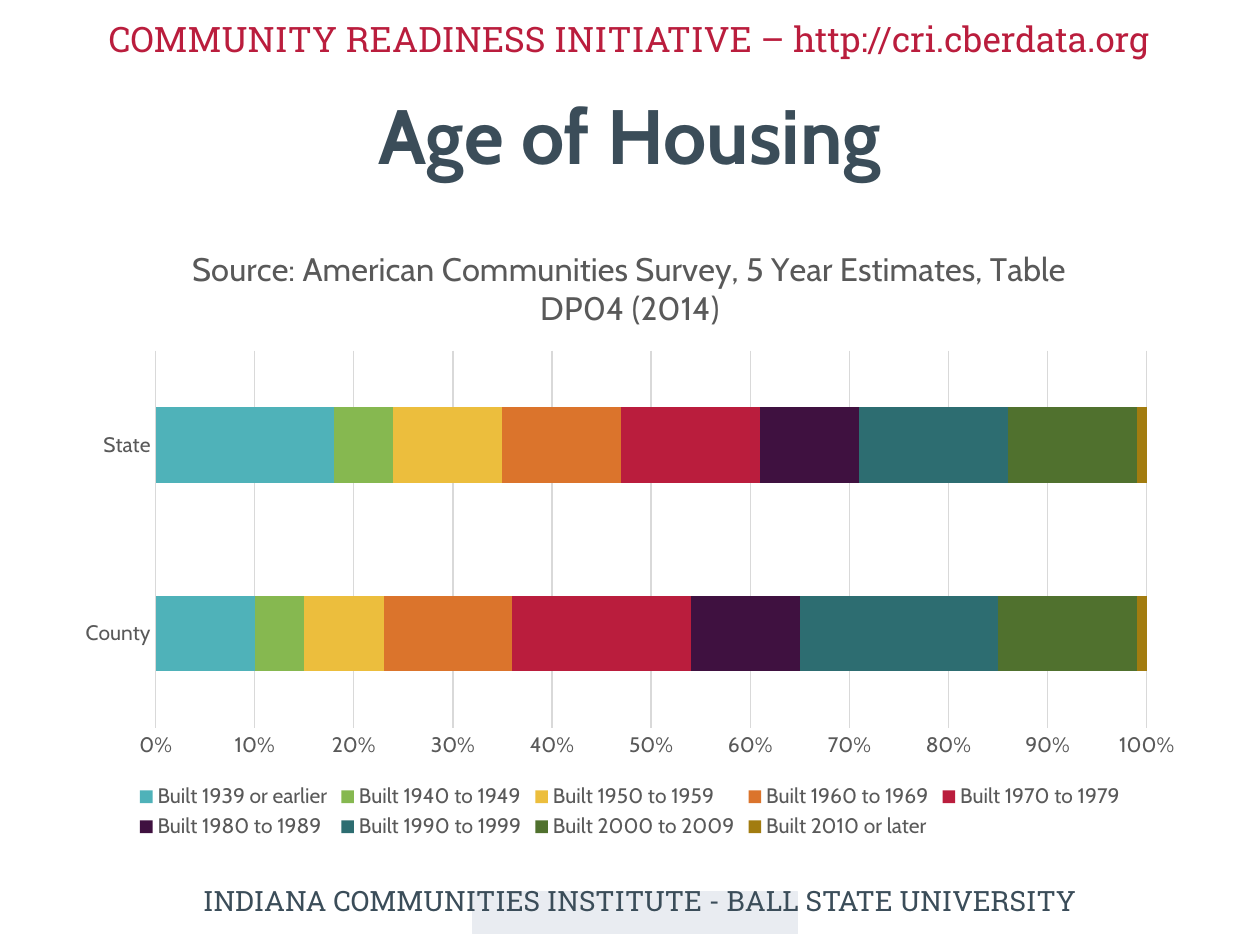
"""Build the Age of Housing slide with a stacked bar chart."""
from pptx import Presentation
from pptx.chart.data import CategoryChartData
from pptx.dml.color import RGBColor
from pptx.enum.chart import XL_CHART_TYPE, XL_LEGEND_POSITION, XL_TICK_MARK
from pptx.enum.shapes import MSO_SHAPE
from pptx.enum.text import MSO_ANCHOR, PP_ALIGN
from pptx.util import Cm, Pt

BAR = XL_CHART_TYPE.BAR_STACKED_100
BOTTOM = XL_LEGEND_POSITION.BOTTOM
NO_TICK = XL_TICK_MARK.NONE
RECT = MSO_SHAPE.RECTANGLE
MIDDLE = MSO_ANCHOR.MIDDLE
CENTER = PP_ALIGN.CENTER

SLATE = RGBColor(0x3B, 0x4D, 0x59)
RED = RGBColor(0xBA, 0x1D, 0x3D)
PALE = RGBColor(0xE9, 0xEC, 0xF1)
GRAY = RGBColor(0x59, 0x59, 0x59)
GRID = RGBColor(0xD9, 0xD9, 0xD9)
TEAL = RGBColor(0x4F, 0xB2, 0xB9)
GREEN = RGBColor(0x86, 0xB8, 0x50)
YELLOW = RGBColor(0xEC, 0xBE, 0x3D)
ORANGE = RGBColor(0xDB, 0x74, 0x2C)
PLUM = RGBColor(0x3F, 0x11, 0x40)
PINE = RGBColor(0x2D, 0x6D, 0x71)
MOSS = RGBColor(0x50, 0x71, 0x2E)
BRONZE = RGBColor(0xA2, 0x7C, 0x10)

PLACES = ("County", "State")
SOURCE = "Source: American Communities Survey, 5 Year Estimates, Table DP04 (2014)"
ERAS = (
    ("Built 1939 or earlier", (10, 18), TEAL),
    ("Built 1940 to 1949", (5, 6), GREEN),
    ("Built 1950 to 1959", (8, 11), YELLOW),
    ("Built 1960 to 1969", (13, 12), ORANGE),
    ("Built 1970 to 1979", (18, 14), RED),
    ("Built 1980 to 1989", (11, 10), PLUM),
    ("Built 1990 to 1999", (20, 15), PINE),
    ("Built 2000 to 2009", (14, 13), MOSS),
    ("Built 2010 or later", (1, 1), BRONZE),
)


class Deck:
    """Hold the style and the current slide."""

    head = "Roboto Slab"
    body = "Cabin"

    def __init__(self):
        self.prs = Presentation()
        self.prs.slide_width, self.prs.slide_height = Cm(25.4), Cm(19.05)
        self.slide = self.prs.slides.add_slide(self.prs.slide_layouts[5])

    def style(self, font, name, size, color, bold=False):
        font.name, font.size, font.bold = name, Pt(size), bold
        font.color.rgb = color

    def fill(self, frame, text, name, size, color, bold=False):
        frame.word_wrap = True
        frame.text = text
        para = frame.paragraphs[0]
        para.alignment = CENTER
        self.style(para.runs[0].font, name, size, color, bold)

    def title(self, text, box):
        shape = self.slide.shapes.title
        shape.left, shape.top, shape.width, shape.height = map(Cm, box)
        self.fill(shape.text_frame, text, self.body, 44, SLATE, True)
        shape.text_frame.vertical_anchor = MIDDLE

    def label(self, text, box, size, color):
        shape = self.slide.shapes.add_textbox(*map(Cm, box))
        self.fill(shape.text_frame, text, self.head, size, color)

    def block(self, box, color):
        shape = self.slide.shapes.add_shape(RECT, *map(Cm, box))
        shape.shadow.inherit = False
        shape.fill.solid()
        shape.fill.fore_color.rgb = color
        shape.line.color.rgb = color
        shape.line.width = Pt(0.75)

    def rule(self, line):
        line.color.rgb = GRID
        line.width = Pt(0.75)

    def chart(self, title, cats, rows, box):
        data = CategoryChartData()
        data.categories = cats
        for name, vals, _ in rows:
            data.add_series(name, vals)
        chart = self.slide.shapes.add_chart(BAR, *map(Cm, box), data).chart
        self.style(chart.font, self.body, 12, GRAY)
        self.fill(chart.chart_title.text_frame, title, self.body, 18.6, GRAY)
        chart.chart_title.include_in_layout = False
        chart.has_legend = True
        chart.legend.position = BOTTOM
        chart.legend.include_in_layout = False
        self.style(chart.legend.font, self.body, 12, GRAY)

        plot = chart.plots[0]
        plot.gap_width, plot.overlap = 150, 100
        plot.vary_by_categories = False
        for series, (_, _, color) in zip(plot.series, rows):
            series.format.fill.solid()
            series.format.fill.fore_color.rgb = color

        cat, val = chart.category_axis, chart.value_axis
        for axis in (cat, val):
            axis.major_tick_mark = axis.minor_tick_mark = NO_TICK
            self.style(axis.tick_labels.font, self.body, 12, GRAY)
        self.rule(cat.format.line)
        val.format.line.fill.background()
        val.has_major_gridlines = True
        self.rule(val.major_gridlines.format.line)
        val.tick_labels.number_format = "0%"
        val.tick_labels.number_format_is_linked = False


def main():
    deck = Deck()
    deck.block((9.53, 17.98, 6.55, 0.84), PALE)
    deck.label("INDIANA COMMUNITIES INSTITUTE - BALL STATE UNIVERSITY",
               (1.47, 17.68, 22.86, 0.94), 16, SLATE)
    deck.label("COMMUNITY READINESS INITIATIVE – http://cri.cberdata.org",
               (0.2, 0.23, 24.97, 1.12), 20, RED)
    deck.title("Age of Housing", (1.27, 1.47, 22.86, 2.46))
    deck.chart(SOURCE, PLACES, ERAS, (1.27, 4.45, 22.86, 12.57))
    deck.prs.save("out.pptx")


if __name__ == "__main__":
    main()
